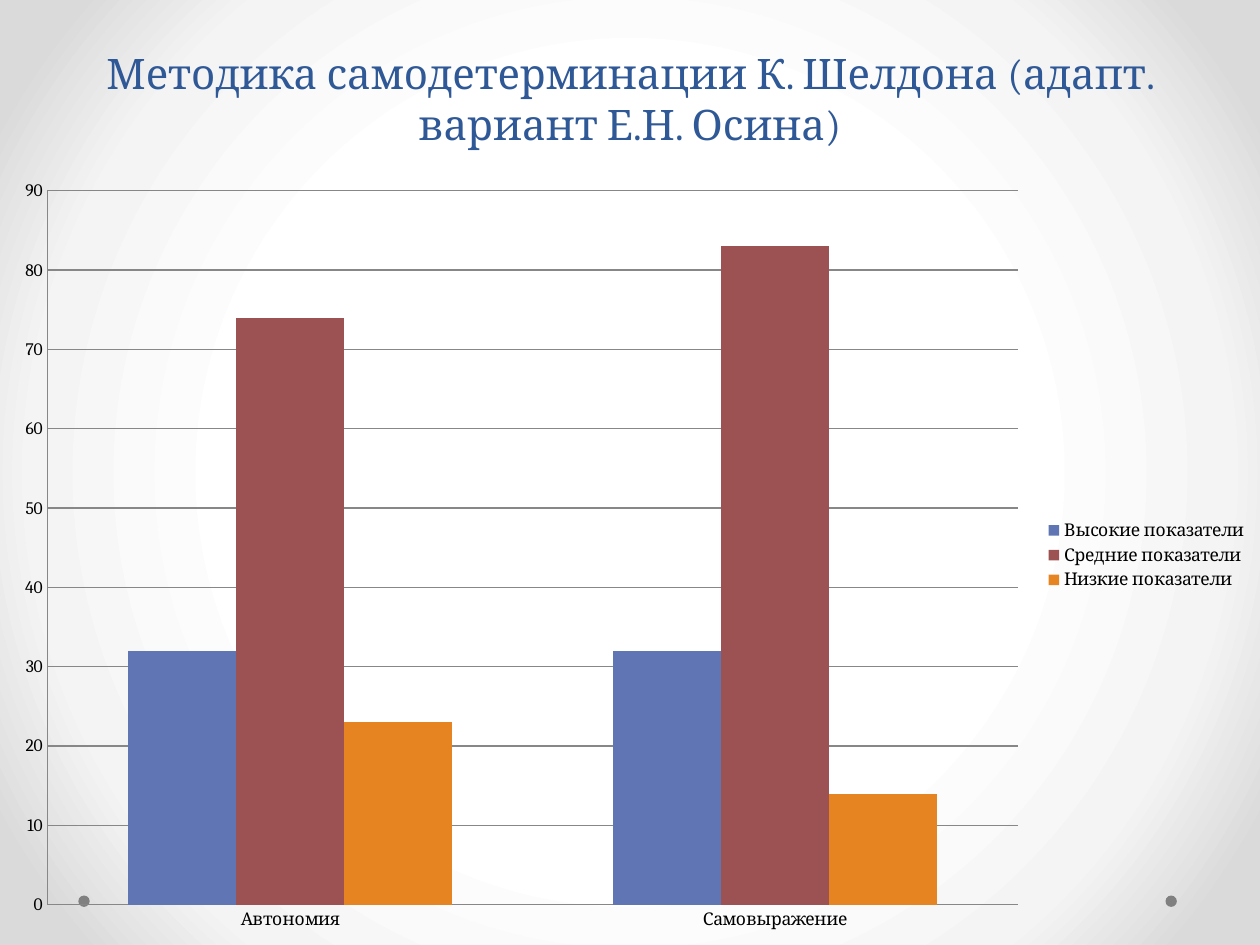
from dataclasses import dataclass

from lxml.etree import SubElement
from pptx import Presentation
from pptx.chart.data import CategoryChartData
from pptx.dml.color import RGBColor
from pptx.enum.chart import XL_CHART_TYPE, XL_LEGEND_POSITION, XL_TICK_MARK
from pptx.enum.shapes import MSO_SHAPE
from pptx.enum.text import MSO_ANCHOR, PP_ALIGN
from pptx.oxml.ns import qn
from pptx.util import Pt


@dataclass(frozen=True)
class Theme:
    font: str = "Cambria"
    title_size: int = 24
    chart_size: int = 10
    title: str = "2F5897"
    text: str = "000000"
    dot: str = "808080"
    line: str = "878787"
    series: tuple = ("6076B4", "9C5252", "E68422")
    background: tuple = ((50, "FFFFFF"), (76, "F4F4F4"), (92, "DADADA"))


THEME = Theme()
TITLE = "Методика самодетерминации К. Шелдона (адапт. вариант Е.Н. Осина)"
CATEGORIES = ("Автономия", "Самовыражение")
SERIES = (
    ("Высокие показатели", (32, 32)),
    ("Средние показатели", (74, 83)),
    ("Низкие показатели", (23, 14)),
)


def rgb(value):
    return RGBColor.from_string(value)


def paint_background(s):
    """Radial gradient spreading from the slide centre."""
    fill = s.background.fill
    fill.gradient()
    grad = s.background._cSld.find(".//" + qn("a:gradFill"))
    for child in list(grad):
        grad.remove(child)
    stops = SubElement(grad, qn("a:gsLst"))
    for position, color in THEME.background:
        stop = SubElement(stops, qn("a:gs"), pos=str(position * 1000))
        SubElement(stop, qn("a:srgbClr"), val=color)
    circle = SubElement(grad, qn("a:path"), path="circle")
    SubElement(circle, qn("a:fillToRect"), l="50000", t="50000", r="50000", b="50000")


def add_dots(s, left, top, width, size):
    """One dot at each end of the given strip."""
    for x in (left, left + width - size):
        sp = s.shapes.add_shape(MSO_SHAPE.OVAL, Pt(x), Pt(top), Pt(size), Pt(size))
        sp.shadow.inherit = False
        sp.fill.solid()
        sp.fill.fore_color.rgb = rgb(THEME.dot)
        sp.line.fill.background()


def add_title(s, left, top, width, height):
    tf = s.shapes.add_textbox(Pt(left), Pt(top), Pt(width), Pt(height)).text_frame
    tf.word_wrap = True
    tf.vertical_anchor = MSO_ANCHOR.BOTTOM
    p = tf.paragraphs[0]
    p.alignment = PP_ALIGN.CENTER
    r = p.add_run()
    r.text = TITLE
    r.font.name = THEME.font
    r.font.size = Pt(THEME.title_size)
    r.font.color.rgb = rgb(THEME.title)


def add_scores_chart(s, left, top, width, height):
    data = CategoryChartData()
    data.categories = CATEGORIES
    for name, values in SERIES:
        data.add_series(name, values)
    chart = s.shapes.add_chart(XL_CHART_TYPE.COLUMN_CLUSTERED, Pt(left), Pt(top),
                               Pt(width), Pt(height), data).chart
    chart.has_title = False
    chart.font.name = THEME.font
    chart.font.size = Pt(THEME.chart_size)
    chart.font.color.rgb = rgb(THEME.text)

    # Columns
    plot = chart.plots[0]
    plot.gap_width = 150
    plot.overlap = 0
    plot.vary_by_categories = False
    for series, color in zip(plot.series, THEME.series):
        series.format.fill.solid()
        series.format.fill.fore_color.rgb = rgb(color)

    # Axes and gridlines
    values = chart.value_axis
    values.minimum_scale, values.maximum_scale, values.major_unit = 0, 90, 10
    values.has_major_gridlines = True
    for axis in (chart.category_axis, values):
        axis.major_tick_mark = XL_TICK_MARK.NONE
        axis.minor_tick_mark = XL_TICK_MARK.NONE
    for part in (chart.category_axis, values, values.major_gridlines):
        part.format.line.color.rgb = rgb(THEME.line)
        part.format.line.width = Pt(0.75)

    # Legend
    chart.has_legend = True
    chart.legend.position = XL_LEGEND_POSITION.RIGHT
    chart.legend.include_in_layout = False


def main():
    prs = Presentation()
    prs.slide_width, prs.slide_height = Pt(720), Pt(540)
    s = prs.slides.add_slide(prs.slide_layouts[6])
    paint_background(s)
    add_dots(s, 44.75, 511.75, 627.75, 6.5)
    add_title(s, 36, 0, 648, 88.5)
    add_scores_chart(s, 0, 94.5, 720, 445.5)
    prs.save("out.pptx")


if __name__ == "__main__":
    main()
